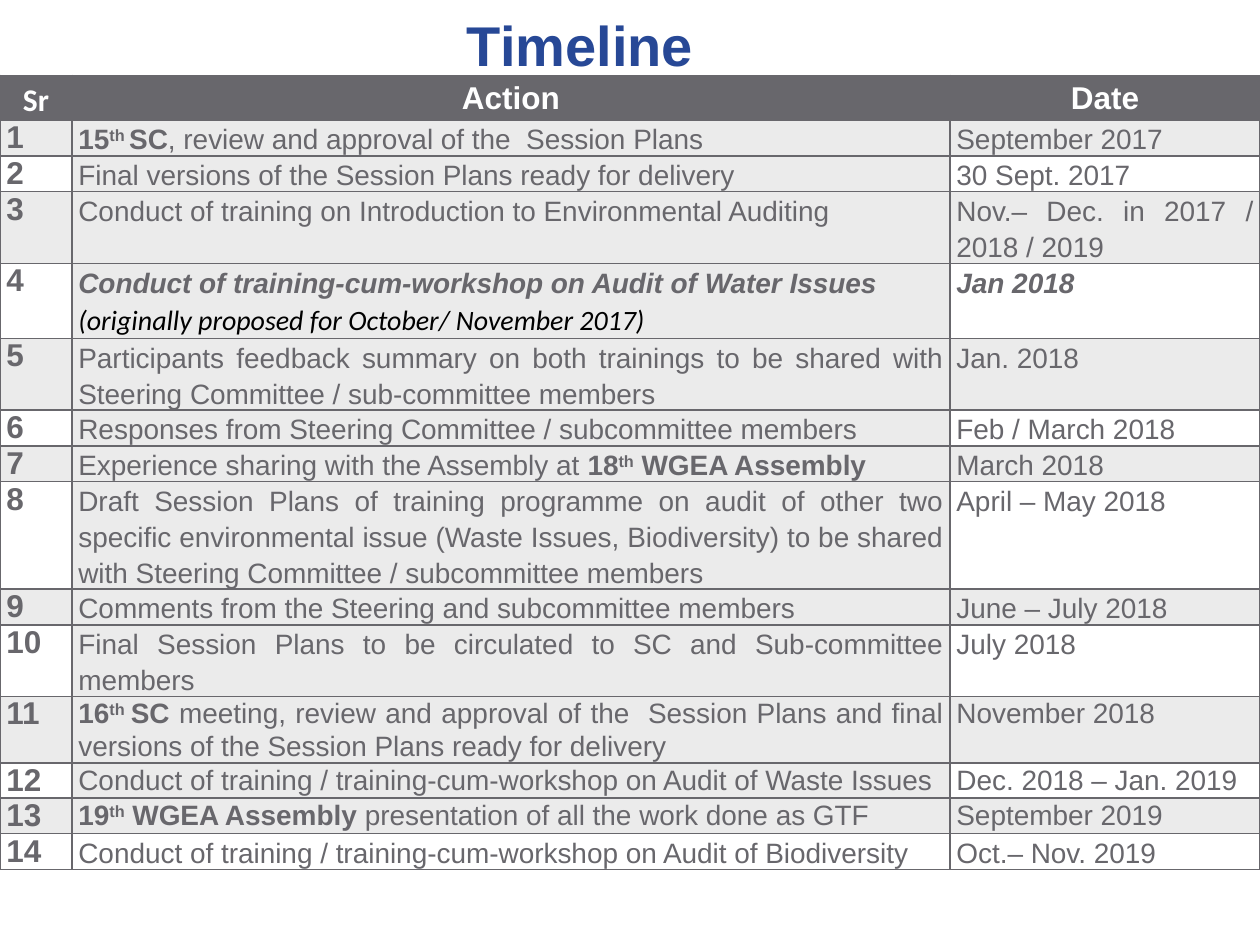
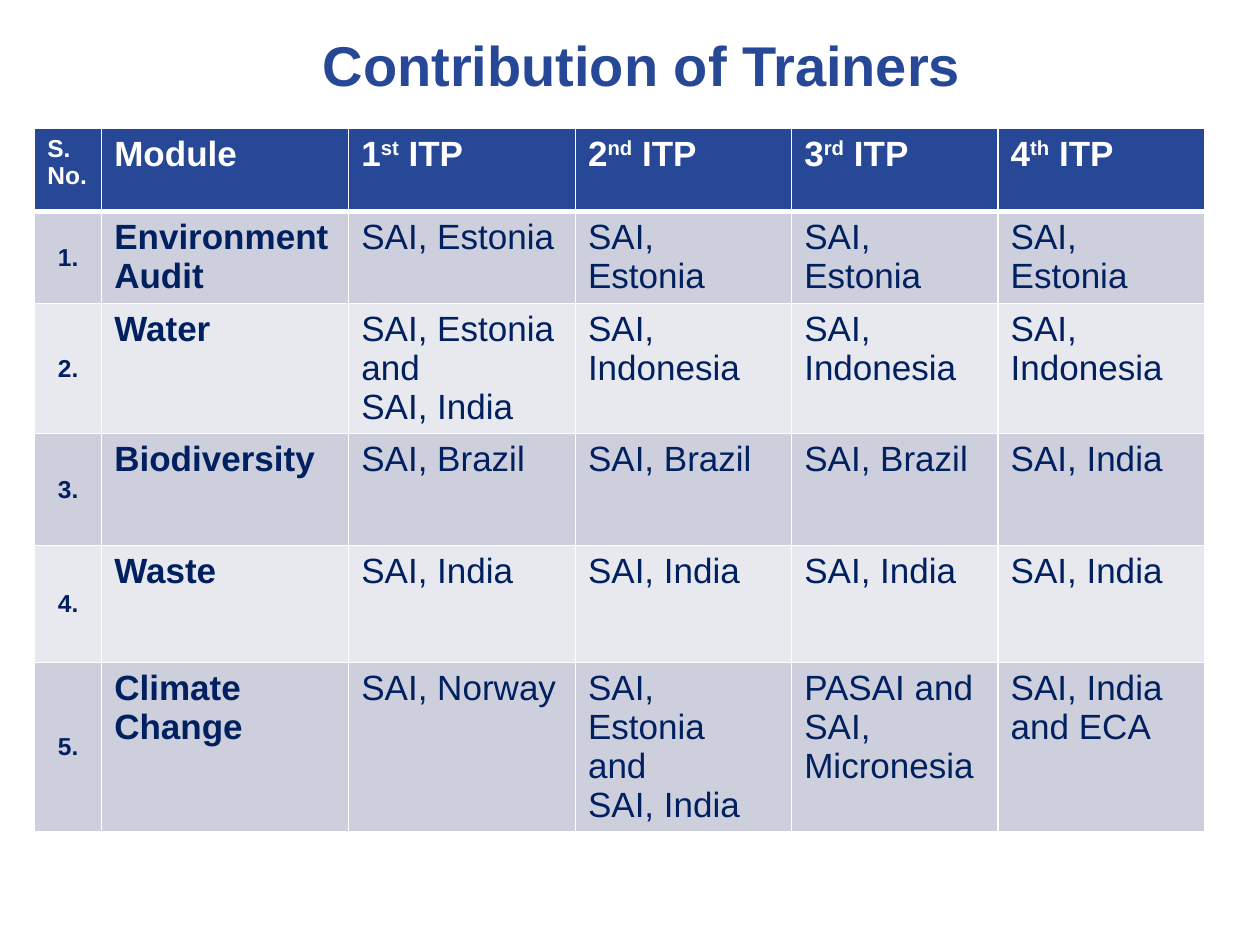
from lxml import etree
from pptx import Presentation
from pptx.dml.color import RGBColor
from pptx.enum.text import MSO_ANCHOR, MSO_AUTO_SIZE, PP_ALIGN
from pptx.oxml.ns import qn
from pptx.util import Cm, Pt

LEFT, CENTER, JUSTIFY = PP_ALIGN.LEFT, PP_ALIGN.CENTER, PP_ALIGN.JUSTIFY
TOP, MIDDLE = MSO_ANCHOR.TOP, MSO_ANCHOR.MIDDLE
NO_FIT = MSO_AUTO_SIZE.NONE
TITLE_ONLY = 5

BLUE, HEADER_BLUE, NAVY = "274896", "274897", "002060"
GREY, PALE_GREY = "68676C", "EBEBEB"
BLUE_BAND, PALE_BAND = "CDCFDD", "E8E9EF"
WHITE, BLACK = "FFFFFF", "000000"

BOLD = {"bold": True}
STRONG_ITALIC = {"bold": True, "italic": True}
NOTE = {"italic": True, "name": "Calibri", "color": BLACK}


def rgb(value):
    return RGBColor.from_string(value)


def ordinal(number, suffix, tail="", bold=True):
    """Spans for a number with a raised suffix and the words after it."""
    style = {"bold": bold}
    return [(number, style), (suffix, {**style, "raised": True}), (tail, style)]


def style_span(span, style):
    style = dict(style)
    span.font.color.rgb = rgb(style.pop("color"))
    if style.pop("raised", False):
        span.font._element.set("baseline", "30000")
    for name, value in style.items():
        setattr(span.font, name, value)


def write(frame, paragraphs, base, layout):
    """Fill a frame; each paragraph is a string or a list of (text, style)."""
    for index, content in enumerate(paragraphs):
        para = frame.paragraphs[0] if index == 0 else frame.add_paragraph()
        for name, value in layout.items():
            setattr(para, name, value)
        spans = [(content, {})] if isinstance(content, str) else content
        for text, style in spans:
            if text:
                span = para.add_run()
                span.text = text
                style_span(span, {**base, **style})


def set_borders(cell, color, widths):
    """Draw borders; widths are points for left, right, top and bottom."""
    properties = cell._tc.get_or_add_tcPr()
    for index, (side, width) in enumerate(zip("LRTB", widths)):
        line = etree.Element(qn(f"a:ln{side}"), w=str(Pt(width)))
        fill = etree.SubElement(line, qn("a:solidFill"))
        etree.SubElement(fill, qn("a:srgbClr"), val=color)
        properties.insert(index, line)


def add_title(page, text, box):
    title = page.shapes.title
    title.left, title.top, title.width, title.height = map(Cm, box)
    frame = title.text_frame
    for name, value in {"auto_size": NO_FIT, "vertical_anchor": MIDDLE}.items():
        setattr(frame, name, value)
    style = {"size": Pt(32), "name": "Arial", "bold": True, "color": BLUE}
    write(frame, [text], style, {"alignment": CENTER})


def add_grid(page, left, top, widths, heights):
    """Add a plain table at the given place, with sizes in centimetres."""
    table = page.shapes.add_table(len(heights), len(widths), Cm(left), Cm(top),
                                  Cm(sum(widths)), Cm(sum(heights))).table
    table.horz_banding = False
    for column, width in zip(table.columns, widths):
        column.width = Cm(width)
    for row, height in zip(table.rows, heights):
        row.height = Cm(height)
    return table


def paint(cell, fill, line, widths=(1, 1, 1, 1)):
    cell.fill.solid()
    cell.fill.fore_color.rgb = rgb(fill)
    set_borders(cell, line, widths)


TIMELINE = [
    ([ordinal("15", "th ", "SC")
      + [(", review and approval of the  Session Plans", {})]], "September 2017"),
    (["Final versions of the Session Plans ready for delivery"], "30 Sept. 2017"),
    (["Conduct of training on Introduction to Environmental Auditing"],
     "Nov.– Dec. in 2017 / 2018 / 2019"),
    ([[("Conduct of training-cum-workshop on Audit of Water Issues", STRONG_ITALIC)],
      [("(originally proposed for October/ November 2017)", NOTE)]],
     [("Jan 2018", STRONG_ITALIC)]),
    (["Participants feedback summary on both trainings to be shared with "
      "Steering Committee / sub-committee members"], "Jan. 2018"),
    (["Responses from Steering Committee / subcommittee members"],
     "Feb / March 2018"),
    ([[("Experience sharing with the Assembly at ", {})]
      + ordinal("18", "th", " WGEA Assembly")], "March 2018"),
    (["Draft Session Plans of training programme on audit of other two specific "
      "environmental issue (Waste Issues, Biodiversity) to be shared with "
      "Steering Committee / subcommittee members"], "April – May 2018"),
    (["Comments from the Steering and subcommittee members"], "June – July 2018"),
    (["Final Session Plans to be circulated to SC and Sub-committee members"],
     "July 2018"),
    ([ordinal("16", "th ", "SC ")
      + [("meeting, review and approval of the  Session Plans and final versions "
          "of the Session Plans ready for delivery", {})]], "November 2018"),
    (["Conduct of training / training-cum-workshop on Audit of Waste Issues"],
     "Dec. 2018 – Jan. 2019"),
    ([ordinal("19", "th", " WGEA Assembly ")
      + [("presentation of all the work done as GTF", {})]], "September 2019"),
    (["Conduct of training / training-cum-workshop on Audit of Biodiversity"],
     "Oct.– Nov. 2019"),
]
TIMELINE_HEIGHTS = [0.9, 0.7, 0.7, 1.43, 1.5, 1.43, 0.7, 0.7,
                    2.15, 0.7, 1.43, 1.34, 0.7, 0.7, 0.7]
TIGHT_ROWS = (11, 12, 13)


def add_timeline(page, left, top):
    table = add_grid(page, left, top, [1.45, 17.7, 6.25], TIMELINE_HEIGHTS)
    number = {"size": Pt(18), "name": "Arial", "bold": True, "color": GREY}
    heading = {**number, "color": WHITE}
    body = {**number, "size": Pt(16), "bold": False}
    centred = {"alignment": CENTER, "line_spacing": 1.15}
    loose = {"alignment": JUSTIFY, "line_spacing": 1.15}
    tight = {"alignment": JUSTIFY, "line_spacing": 1.07, "space_after": Pt(8)}

    for cell in table.iter_cells():
        cell.margin_left = cell.margin_right = Cm(0.13)
        cell.margin_top = cell.margin_bottom = 0

    header = [[("Sr", {"name": "Calibri"})], "Action", "Date"]
    for column, label in enumerate(header):
        cell = table.cell(0, column)
        paint(cell, GREY, GREY)
        write(cell.text_frame, [label], heading, centred)

    for row, (action, date) in enumerate(TIMELINE, 1):
        band = PALE_GREY if row % 2 else WHITE
        action_fill = WHITE if row == len(TIMELINE) else PALE_GREY
        layout = tight if row in TIGHT_ROWS else loose
        parts = [([str(row)], number, {"alignment": LEFT}, band),
                 (action, body, layout, action_fill),
                 ([date], body, layout, band)]
        for column, (paragraphs, style, placing, fill) in enumerate(parts):
            cell = table.cell(row, column)
            paint(cell, fill, GREY)
            write(cell.text_frame, paragraphs, style, placing)


ESTONIA, INDIA, BRAZIL = ["SAI, Estonia"], ["SAI, India"], ["SAI, Brazil"]
INDONESIA, NORWAY = ["SAI, Indonesia"], ["SAI, Norway"]
ESTONIA_AND_INDIA = ESTONIA + ["and"] + INDIA

TRAINERS = [
    ("Environment Audit", [ESTONIA] * 4),
    ("Water", [ESTONIA_AND_INDIA] + [INDONESIA] * 3),
    ("Biodiversity", [BRAZIL] * 3 + [INDIA]),
    ("Waste", [INDIA] * 4),
    ("Climate Change", [NORWAY, ESTONIA_AND_INDIA,
                        ["PASAI and", "SAI, Micronesia"],
                        INDIA + ["and ECA"]]),
]


def add_trainers(page, left, top):
    table = add_grid(page, left, top, [1.35, 4.98, 4.57, 4.36, 4.16, 4.16],
                     [1.68, 1.85, 2.62, 2.26, 2.36, 3.39])
    body = {"size": Pt(20), "name": "Arial", "bold": False, "color": NAVY}
    module_style = {**body, **BOLD}
    heading = {**module_style, "color": WHITE}
    small = {"size": Pt(14)}

    rounds = [[ordinal(str(index), suffix, " ITP")]
              for index, suffix in enumerate(["st", "nd", "rd", "th"], 1)]
    for column, label in enumerate([["S.", "No."], ["Module"]] + rounds):
        cell = table.cell(0, column)
        paint(cell, HEADER_BLUE, WHITE, (1, 1, 1, 3))
        style = heading if column else {**heading, **small}
        write(cell.text_frame, label, style, {"alignment": LEFT})

    for row, (module, trainers) in enumerate(TRAINERS, 1):
        band = BLUE_BAND if row % 2 else PALE_BAND
        widths = (1, 1, 3 if row == 1 else 1, 1)
        parts = [([f"{row}."], {**module_style, **small}, CENTER, MIDDLE),
                 ([module], module_style, LEFT, TOP)]
        parts += [(names, body, LEFT, TOP) for names in trainers]
        for column, (paragraphs, style, align, anchor) in enumerate(parts):
            cell = table.cell(row, column)
            paint(cell, band, WHITE, widths)
            cell.vertical_anchor = anchor
            write(cell.text_frame, paragraphs, style, {"alignment": align})


def add_page(deck, title, title_box, add_table_part, left, top):
    page = deck.slides.add_slide(deck.slide_layouts[TITLE_ONLY])
    add_title(page, title, title_box)
    add_table_part(page, left, top)


def main():
    deck = Presentation()
    deck.slide_width, deck.slide_height = Cm(25.4), Cm(19.05)
    add_page(deck, "Timeline", (1.09, 0.23, 21.21, 1.3), add_timeline, 0, 1.52)
    add_page(deck, "Contribution of Trainers", (2.31, 0.36, 21.26, 1.85),
             add_trainers, 0.7, 2.59)
    deck.save("out.pptx")


if __name__ == "__main__":
    main()
